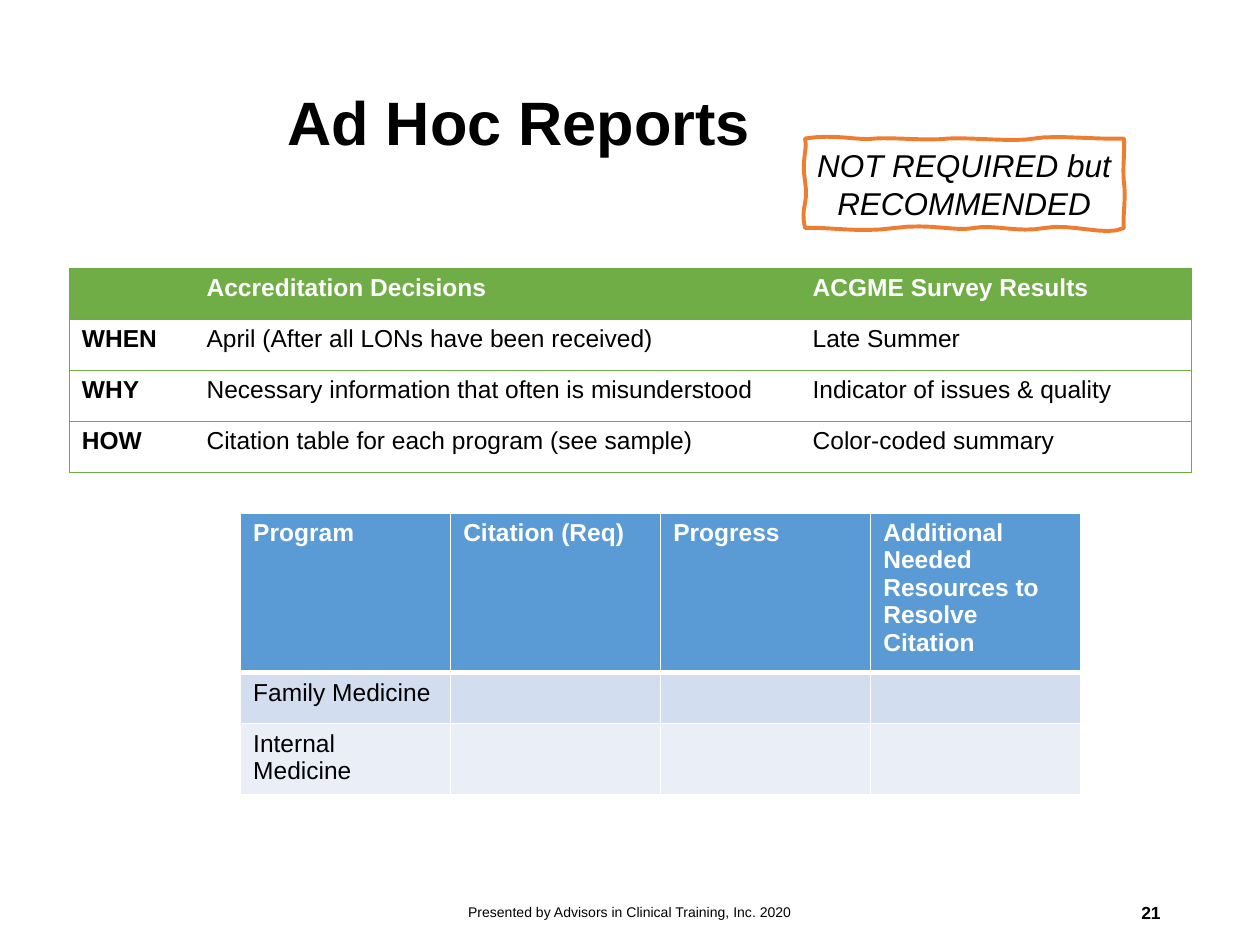
from lxml.etree import SubElement
from pptx import Presentation
from pptx.dml.color import RGBColor
from pptx.enum.text import MSO_ANCHOR as Anchor, PP_ALIGN as Align
from pptx.oxml.ns import qn
from pptx.util import Inches, Pt

COLUMNS, ROWS = 100, 75
CELL = Inches(10) // COLUMNS
FONT = "Arial"
BLACK, WHITE, ORANGE = "000000", "FFFFFF", "ED7D31"
GREEN, GREEN_RULE = "70AD47", "6DAC43"
BLUE, BLUE_BANDS = "5B9BD5", ("D2DEEF", "EAEFF7")

SCHEDULE = [
    ("", "Accreditation Decisions", "ACGME Survey Results"),
    ("WHEN", "April (After all LONs have been received)", "Late Summer"),
    ("WHY", "Necessary information that often is misunderstood",
     "Indicator of issues & quality"),
    ("HOW", "Citation table for each program (see sample)",
     "Color-coded summary"),
]
CITATIONS = [
    ("Program", "Citation (Req)", "Progress",
     "Additional Needed Resources to Resolve Citation"),
    ("Family Medicine", "", "", ""),
    ("Internal Medicine", "", "", ""),
]
WAVY_START = (63.9, 11)
WAVY_CURVES = [
    ((66.4, 10.6), (68, 11.2), (69.5, 11)),
    ((71, 10.9), (73.5, 11.2), (75.3, 11)),
    ((77.1, 10.9), (80.5, 11.3), (82.1, 11)),
    ((83.8, 10.7), (87, 11.1), (89.2, 11)),
    ((89.3, 11.8), (89.1, 13.2), (89.2, 14.4)),
    ((89.4, 15.7), (89.1, 17.1), (89.2, 18.1)),
    ((87.8, 18.8), (85, 17.7), (82.9, 18.1)),
    ((80.8, 18.5), (78.9, 17.8), (77.3, 18.1)),
    ((75.8, 18.4), (73.8, 17.7), (71, 18.1)),
    ((68.2, 18.5), (65.7, 18), (63.9, 18.1)),
    ((63.5, 16.4), (64.2, 16.3), (63.9, 14.4)),
    ((63.6, 12.6), (64.1, 12), (63.9, 11)),
]


def color(hex_text):
    """Turn a hex string into a colour."""
    return RGBColor.from_string(hex_text)


def grid(*cells):
    """Turn counts of grid cells into slide lengths."""
    return [round(count * CELL) for count in cells]


def write(frame, text, size=14, ink=BLACK, bold=False, italic=False,
          align=Align.LEFT, spacing=None):
    """Put one formatted paragraph into a text frame."""
    paragraph = frame.paragraphs[0]
    paragraph.alignment = align
    paragraph.line_spacing = spacing
    run = paragraph.add_run()
    run.text = text
    font = run.font
    font.name, font.size, font.bold, font.italic = FONT, Pt(size), bold, italic
    font.color.rgb = color(ink)


def add_title(slide, text):
    """Move and fill the title placeholder."""
    title = slide.shapes.title
    title.left, title.top, title.width, title.height = grid(21.8, 2.7, 71.4, 14.5)
    frame = title.text_frame
    frame.vertical_anchor = Anchor.MIDDLE
    write(frame, text, size=35, bold=True, spacing=0.9)


def add_footer(slide, area, text, **style):
    """Add a one-line text box at the foot of the slide."""
    frame = slide.shapes.add_textbox(*grid(*area)).text_frame
    frame.word_wrap = True
    frame.vertical_anchor = Anchor.MIDDLE
    write(frame, text, **style)


def curve_points(start, curves, steps=8):
    """Trace points along a chain of cubic curves."""
    points = []
    for first, second, end in curves:
        for step in range(1, steps + 1):
            t = step / steps
            weights = ((1 - t) ** 3, 3 * t * (1 - t) ** 2,
                       3 * t * t * (1 - t), t ** 3)
            corners = (start, first, second, end)
            points.append(tuple(
                sum(weight * corner[axis]
                    for weight, corner in zip(weights, corners))
                for axis in (0, 1)))
        start = end
    return points


def add_wavy_note(slide, text):
    """Add the hand-drawn frame with its remark."""
    builder = slide.shapes.build_freeform(
        *grid(*WAVY_START), scale=1.0)
    builder.add_line_segments(
        [grid(*point) for point in curve_points(WAVY_START, WAVY_CURVES)],
        close=True)
    note = builder.convert_to_shape()
    note.shadow.inherit = False
    note.fill.background()
    note.line.color.rgb = color(ORANGE)
    note.line.width = Pt(2.25)
    frame = note.text_frame
    frame.word_wrap = True
    frame.vertical_anchor = Anchor.MIDDLE
    frame.margin_left = frame.margin_right = Inches(0.05)
    write(frame, text, size=18, italic=True, align=Align.CENTER)


def set_borders(cell, **sides):
    """Draw each side L, R, T, B as (colour, points), or none."""
    properties = cell._tc.get_or_add_tcPr()
    for side in "LRTB":
        rule = sides.get(side)
        line = SubElement(properties, qn(f"a:ln{side}"))
        if rule is None:
            SubElement(line, qn("a:noFill"))
            continue
        ink, points = rule
        line.set("w", str(Pt(points)))
        fill = SubElement(line, qn("a:solidFill"))
        SubElement(fill, qn("a:srgbClr")).set("val", ink)


def add_grid_table(slide, origin, widths, heights, content, style_cell):
    """Add a table and let style_cell return each cell's fill and text style."""
    area = grid(*origin, sum(widths), sum(heights))
    table = slide.shapes.add_table(len(heights), len(widths), *area).table
    for column, width in zip(table.columns, grid(*widths)):
        column.width = width
    for row, height in zip(table.rows, grid(*heights)):
        row.height = height
    for r, entries in enumerate(content):
        for c, entry in enumerate(entries):
            cell = table.cell(r, c)
            fill, style = style_cell(cell, r, c)
            if fill:
                cell.fill.solid()
                cell.fill.fore_color.rgb = color(fill)
            else:
                cell.fill.background()
            if entry:
                write(cell.text_frame, entry, **style)


def style_schedule(cell, row, column):
    """Style the green table: ruled rows inside an outer frame."""
    rule = (GREEN_RULE, 0.75)
    set_borders(cell, T=rule, B=rule, L=rule if column == 0 else None,
                R=rule if column == len(SCHEDULE[0]) - 1 else None)
    if row == 0:
        return GREEN, dict(ink=WHITE, bold=True)
    return None, dict(bold=column == 0)


def style_citations(cell, row, column):
    """Style the blue table: white rules and banded rows."""
    thin, thick = (WHITE, 1), (WHITE, 3)
    set_borders(cell, L=thin, R=thin, T=thick if row == 1 else thin,
                B=thick if row == 0 else thin)
    if row == 0:
        return BLUE, dict(ink=WHITE, bold=True)
    return BLUE_BANDS[(row - 1) % 2], {}


def main():
    """Build the slide and save it."""
    deck = Presentation()
    deck.slide_width, deck.slide_height = grid(COLUMNS, ROWS)
    slide = deck.slides.add_slide(deck.slide_layouts[5])
    add_title(slide, "Ad Hoc Reports")
    add_footer(slide, (70.6, 70.4, 22.5, 4), "21",
               size=10, bold=True, align=Align.RIGHT)
    add_wavy_note(slide, "NOT REQUIRED but RECOMMENDED")
    add_grid_table(slide, (5.5, 21.3), (9.9, 48.1, 31.1), [4.05] * 4,
                   SCHEDULE, style_schedule)
    add_grid_table(slide, (19.1, 40.7), [16.67] * 4, (12.6, 4.05, 5.65),
                   CITATIONS, style_citations)
    add_footer(slide, (33.1, 70.4, 33.8, 4),
               "Presented by Advisors in Clinical Training, Inc. 2020",
               size=8, align=Align.CENTER)
    deck.save("out.pptx")


if __name__ == "__main__":
    main()
